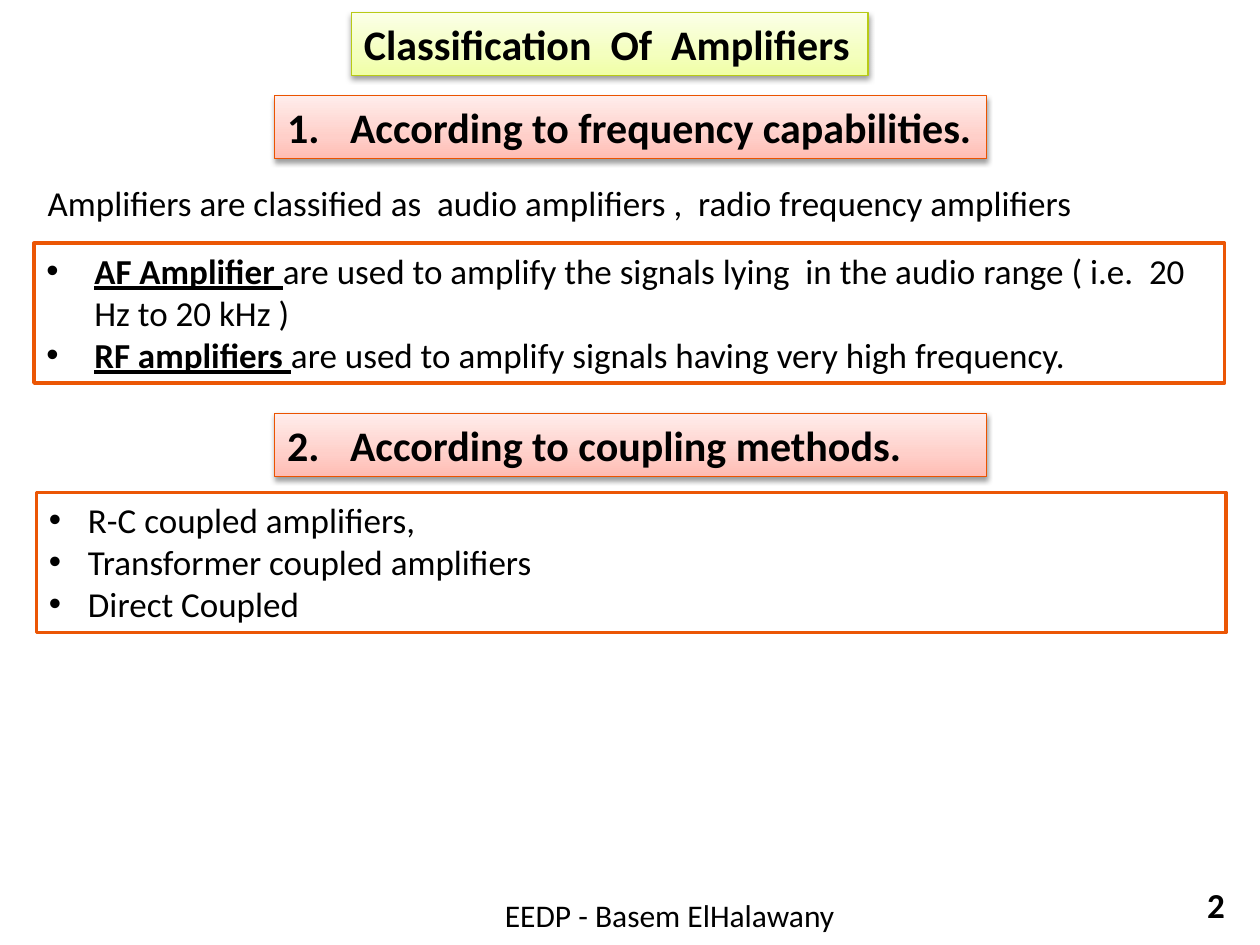
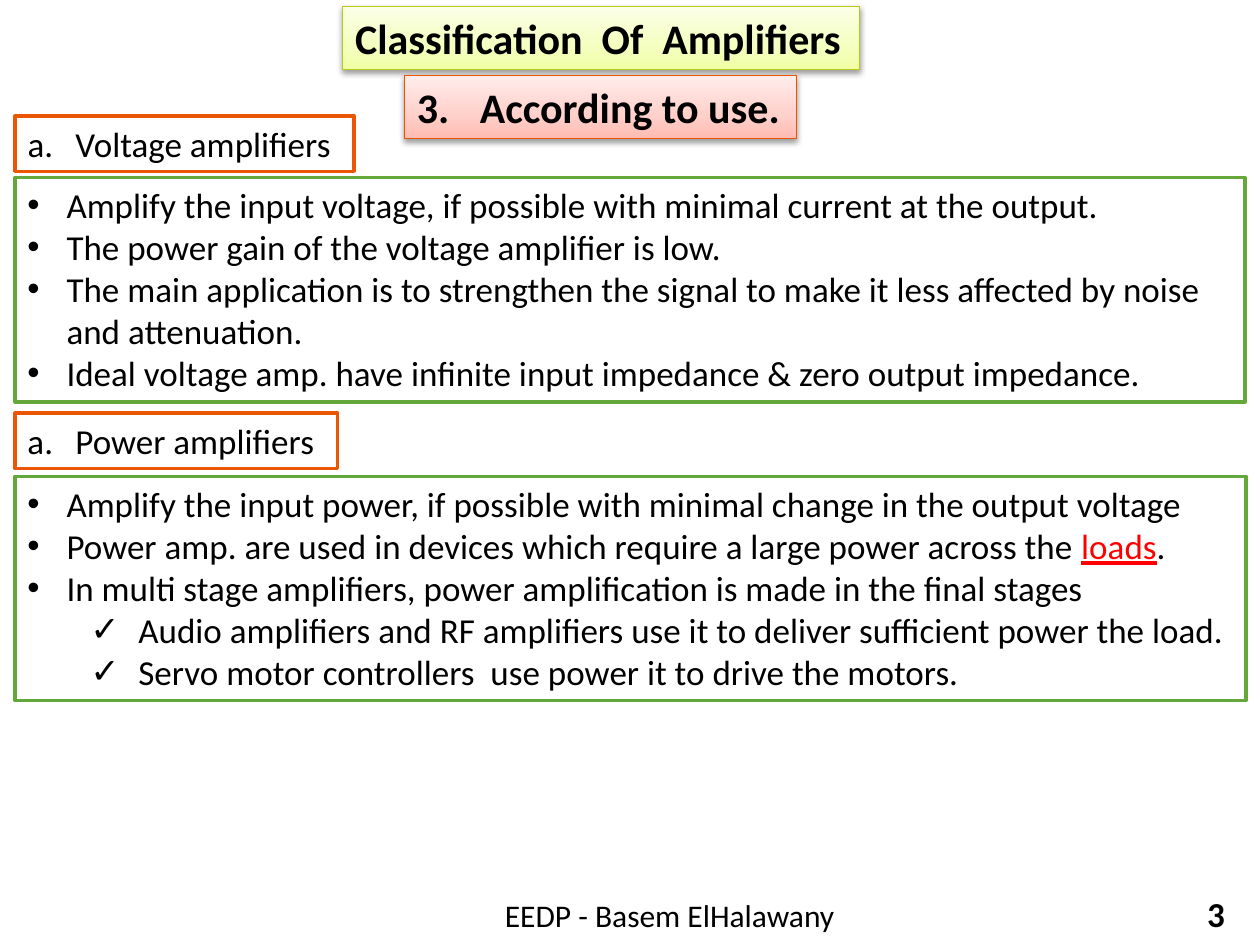
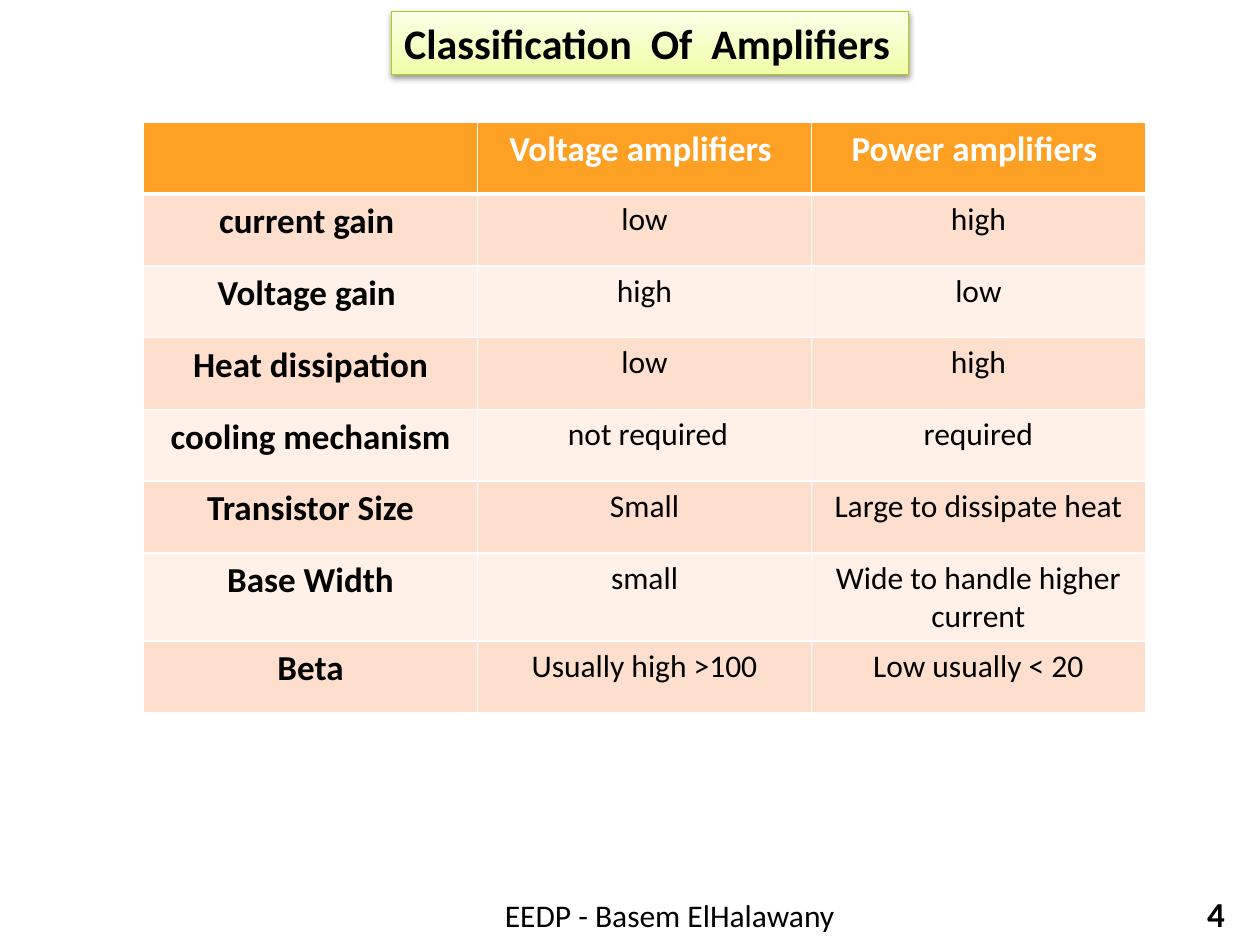
import copy
import dataclasses
import typing

import lxml.etree
import pptx
import pptx.dml.color
import pptx.enum.shapes
import pptx.enum.text
import pptx.oxml.ns
import pptx.slide
import pptx.util

ALIGN = pptx.enum.text.PP_ALIGN
ANCHOR = pptx.enum.text.MSO_ANCHOR
COLUMNS, ROWS = 100, 75
SLIDE_WIDTH, SLIDE_HEIGHT = pptx.util.Inches(10), pptx.util.Inches(7.5)


@dataclasses.dataclass(frozen=True)
class Theme:
    font: str = "Calibri"
    ink: str = "000000"
    paper: str = "FFFFFF"
    alert: str = "FF0000"
    orange: str = "EB5605"
    green: str = "64A73B"
    title_line: str = "B8CA15"
    title_stops: tuple[str, ...] = ("F0FFA5", "F4FFBF", "FBFFE7")
    heading_line: str = "EB5300"
    heading_stops: tuple[str, ...] = ("FFBCB3", "FFCFC9", "FFEDEB")
    stop_positions: tuple[float, ...] = (0, 0.35, 1)
    table_header: str = "FDA023"
    table_bands: tuple[str, ...] = ("FEDFCD", "FFF0E8")
    heading_size: int = 24
    body_size: int = 20
    small_size: int = 18


THEME = Theme()


@dataclasses.dataclass(frozen=True)
class Area:
    """A place on the grid, in columns and rows."""
    left: float
    top: float
    width: float
    height: float

    def lengths(self) -> tuple[int, int, int, int]:
        column, row = SLIDE_WIDTH / COLUMNS, SLIDE_HEIGHT / ROWS
        return (round(self.left * column), round(self.top * row),
                round(self.width * column), round(self.height * row))


@dataclasses.dataclass(frozen=True)
class Run:
    text: str
    bold: bool = False
    underline: bool = False
    color: str = THEME.ink


@dataclasses.dataclass(frozen=True)
class Marker:
    """A bullet or number with its left margin and hang in inches."""
    tag: str
    attributes: dict[str, str]
    margin: float
    hang: float
    font: str = "Arial"
    level: int = 0


@dataclasses.dataclass(frozen=True)
class Line:
    runs: tuple[Run, ...]
    marker: typing.Optional[Marker] = None


@dataclasses.dataclass(frozen=True)
class Style:
    size: int = THEME.body_size
    outline: str = ""
    outline_width: float = 2
    stops: tuple[str, ...] = ()
    align: ALIGN = ALIGN.LEFT
    anchor: ANCHOR = ANCHOR.TOP
    grow: bool = True


@dataclasses.dataclass(frozen=True)
class Box:
    area: Area
    lines: tuple[Line, ...]
    style: Style
    wrap: bool = True


TITLE = Style(THEME.heading_size, THEME.title_line, 0.75, THEME.title_stops)
HEADING = Style(THEME.heading_size, THEME.heading_line, 0.75, THEME.heading_stops)
PLAIN = Style()
ORANGE_BOX = Style(outline=THEME.orange)
GREEN_BOX = Style(outline=THEME.green)
FOOTER = Style(THEME.small_size, align=ALIGN.CENTER, anchor=ANCHOR.MIDDLE, grow=False)
PAGE_NUMBER = Style(align=ALIGN.RIGHT, anchor=ANCHOR.MIDDLE, grow=False)

BULLET = Marker("a:buChar", {"char": "•"}, 0.31, 0.31)
WIDE_BULLET = Marker("a:buChar", {"char": "•"}, 0.38, 0.38)
CHECK = Marker("a:buChar", {"char": "✓"}, 0.88, 0.38, level=1)
LETTER = Marker("a:buAutoNum", {"type": "alphaLcPeriod"}, 0.38, 0.38, THEME.font)


def rgb(color: str) -> pptx.dml.color.RGBColor:
    return pptx.dml.color.RGBColor.from_string(color)


def add_element(parent: typing.Any, tag: str, **attributes: str) -> typing.Any:
    return lxml.etree.SubElement(parent, pptx.oxml.ns.qn(tag), attributes)


def line_of(text: str, marker: typing.Optional[Marker] = None, bold: bool = False) -> Line:
    return Line((Run(text, bold),), marker)


def title(left: float, top: float) -> Box:
    return Box(Area(left, top, 41, 5),
               (line_of("Classification  Of  Amplifiers", bold=True),), TITLE, wrap=False)


def heading(number: int, text: str, area: Area, wrap: bool = False) -> Box:
    marker = Marker("a:buAutoNum", {"type": "arabicPeriod", "startAt": str(number)},
                    0.5, 0.5, THEME.font)
    return Box(area, (line_of(text, marker, bold=True),), HEADING, wrap)


def label(text: str, area: Area) -> Box:
    return Box(area, (line_of(text, LETTER),), ORANGE_BOX, wrap=False)


def add_marker(paragraph: typing.Any, marker: Marker) -> None:
    paragraph.level = marker.level
    properties = paragraph._p.get_or_add_pPr()
    properties.set("marL", str(pptx.util.Inches(marker.margin)))
    properties.set("indent", str(-pptx.util.Inches(marker.hang)))
    add_element(properties, "a:buFont", typeface=marker.font)
    add_element(properties, marker.tag, **marker.attributes)


def add_run(paragraph: typing.Any, content: Run, size: int) -> None:
    run = paragraph.add_run()
    run.text = content.text
    run.font.name = THEME.font
    run.font.size = pptx.util.Pt(size)
    run.font.bold = content.bold
    run.font.underline = content.underline
    run.font.color.rgb = rgb(content.color)


def add_gradient(shape: typing.Any, colors: tuple[str, ...]) -> None:
    shape.fill.gradient()
    shape.fill.gradient_angle = 90
    stop_list = shape._element.spPr.find(".//" + pptx.oxml.ns.qn("a:gsLst"))
    stop_list.append(copy.deepcopy(stop_list[0]))
    for stop, color, position in zip(shape.fill.gradient_stops, colors, THEME.stop_positions):
        stop.color.rgb = rgb(color)
        stop.position = position


def add_soft_shadow(shape: typing.Any) -> None:
    effects = shape._element.spPr.find(pptx.oxml.ns.qn("a:effectLst"))
    shadow = add_element(effects, "a:outerShdw", blurRad="40000", dist="20000",
                         dir="5400000", rotWithShape="0")
    color = add_element(shadow, "a:srgbClr", val=THEME.ink)
    add_element(color, "a:alpha", val="38000")


def draw_box(slide: pptx.slide.Slide, box: Box) -> None:
    style = box.style
    if style.outline:
        shape = slide.shapes.add_shape(
            pptx.enum.shapes.MSO_SHAPE.RECTANGLE, *box.area.lengths())
        shape.shadow.inherit = False
        shape.line.color.rgb = rgb(style.outline)
        shape.line.width = pptx.util.Pt(style.outline_width)
        if style.stops:
            add_gradient(shape, style.stops)
            add_soft_shadow(shape)
        else:
            shape.fill.solid()
            shape.fill.fore_color.rgb = rgb(THEME.paper)
    else:
        shape = slide.shapes.add_textbox(*box.area.lengths())
    frame = shape.text_frame
    frame.word_wrap = box.wrap
    frame.vertical_anchor = style.anchor
    sizing = pptx.enum.text.MSO_AUTO_SIZE
    frame.auto_size = sizing.SHAPE_TO_FIT_TEXT if style.grow else sizing.NONE
    for index, line in enumerate(box.lines):
        paragraph = frame.add_paragraph() if index else frame.paragraphs[0]
        paragraph.alignment = style.align
        if line.marker:
            add_marker(paragraph, line.marker)
        for run in line.runs:
            add_run(paragraph, run, style.size)


def add_borders(cell: typing.Any, row: int) -> None:
    """Draw thin white borders, thicker between the header and the body."""
    properties = cell._tc.get_or_add_tcPr()
    widths = {"L": 1, "R": 1, "T": 3 if row == 1 else 1, "B": 3 if row == 0 else 1}
    for side, width in widths.items():
        border = add_element(properties, f"a:ln{side}", w=str(pptx.util.Pt(width)))
        add_element(add_element(border, "a:solidFill"), "a:srgbClr", val=THEME.paper)


def draw_table(slide: pptx.slide.Slide, area: Area, rows: tuple[tuple[str, ...], ...]) -> None:
    table = slide.shapes.add_table(len(rows), len(rows[0]), *area.lengths()).table
    table.horz_banding = False
    for row, texts in enumerate(rows):
        for column, text in enumerate(texts):
            is_header, is_strong = row == 0, row == 0 or column == 0
            cell = table.cell(row, column)
            add_borders(cell, row)
            cell.fill.solid()
            cell.fill.fore_color.rgb = rgb(
                THEME.table_header if is_header else THEME.table_bands[(row - 1) % 2])
            if text:
                paragraph = cell.text_frame.paragraphs[0]
                paragraph.alignment = ALIGN.CENTER
                run = Run(text, is_strong, color=THEME.paper if is_header else THEME.ink)
                add_run(paragraph, run, THEME.body_size if is_strong else THEME.small_size)


FREQUENCY_AND_COUPLING = (
    title(27.9, 1),
    heading(1, "According to frequency capabilities.", Area(21.8, 7.6, 56.5, 5)),
    heading(2, "According to coupling methods.", Area(21.8, 32.8, 56.5, 5), wrap=True),
    Box(Area(2.7, 19.3, 94.5, 11.1), (
        Line((Run("AF Amplifier ", True, True),
              Run("are used to amplify the signals lying  in the audio range "
                  "( i.e.  20 Hz to 20 kHz )")), WIDE_BULLET),
        Line((Run("RF amplifiers ", True, True),
              Run("are used to amplify signals having very high frequency.")), WIDE_BULLET),
    ), ORANGE_BOX),
    Box(Area(2.8, 13.9, 94.5, 4.4), (
        line_of("Amplifiers are classified as  audio amplifiers ,  radio frequency amplifiers"),
    ), PLAIN),
    Box(Area(2.9, 39.1, 94.4, 11.1), (
        line_of("R-C coupled amplifiers,", BULLET),
        line_of("Transformer coupled amplifiers", BULLET),
        line_of("Direct Coupled", BULLET),
    ), ORANGE_BOX),
)

USE = (
    title(27.2, 0.5),
    heading(3, "According to use.", Area(32.1, 6, 31.1, 5)),
    Box(Area(1.2, 14.1, 97.6, 17.8), (
        line_of("Amplify the input voltage, if possible with minimal current at the output.",
                BULLET),
        line_of("The power gain of the voltage amplifier is low.", BULLET),
        line_of("The main application is to strengthen the signal to make it less affected "
                "by noise and attenuation.", BULLET),
        line_of("Ideal voltage amp. have infinite input impedance & zero output impedance.",
                BULLET),
    ), GREEN_BOX),
    label("Voltage amplifiers", Area(1.2, 9.2, 26.9, 4.4)),
    Box(Area(1.2, 37.8, 97.7, 17.8), (
        line_of("Amplify the input power, if possible with minimal change in the output voltage",
                BULLET),
        Line((Run("Power amp. are used in devices which require a large power across the "),
              Run("loads", underline=True, color=THEME.alert), Run(".")), BULLET),
        line_of("In multi stage amplifiers, power amplification is made in the final stages",
                BULLET),
        line_of("Audio amplifiers and RF amplifiers use it to deliver sufficient power the load.",
                CHECK),
        line_of("Servo motor controllers  use power it to drive the motors.", CHECK),
    ), GREEN_BOX),
    label("Power amplifiers", Area(1.2, 32.8, 25.6, 4.4)),
)

COMPARISON = (
    ("", "Voltage amplifiers ", "Power amplifiers "),
    ("current gain ", "low", "high"),
    ("Voltage gain ", "high", "low"),
    ("Heat dissipation", "low", "high"),
    ("cooling mechanism", " not required", "required"),
    ("Transistor Size", "Small", "Large to dissipate heat"),
    ("Base Width", "small", "Wide to handle higher current"),
    ("Beta", "Usually high >100", "Low usually < 20"),
)


def add_slide(presentation: typing.Any, number: int, boxes: tuple[Box, ...],
              number_top: float = 70.5) -> pptx.slide.Slide:
    slide = presentation.slides.add_slide(presentation.slide_layouts[6])
    footer = Box(Area(31.1, 70.6, 44.1, 4), (line_of("EEDP - Basem ElHalawany"),), FOOTER)
    page_number = Box(Area(91.7, number_top, 6.5, 4),
                      (line_of(str(number), bold=True),), PAGE_NUMBER)
    for box in (footer, page_number, *boxes):
        draw_box(slide, box)
    return slide


def main() -> None:
    presentation = pptx.Presentation()
    presentation.slide_width, presentation.slide_height = SLIDE_WIDTH, SLIDE_HEIGHT
    add_slide(presentation, 2, FREQUENCY_AND_COUPLING, number_top=69.8)
    add_slide(presentation, 3, USE)
    comparison_slide = add_slide(presentation, 4, (title(31.1, 0.9),))
    draw_table(comparison_slide, Area(11.4, 9.7, 79.5, 5.7 * len(COMPARISON)), COMPARISON)
    presentation.save("out.pptx")


if __name__ == "__main__":
    main()
